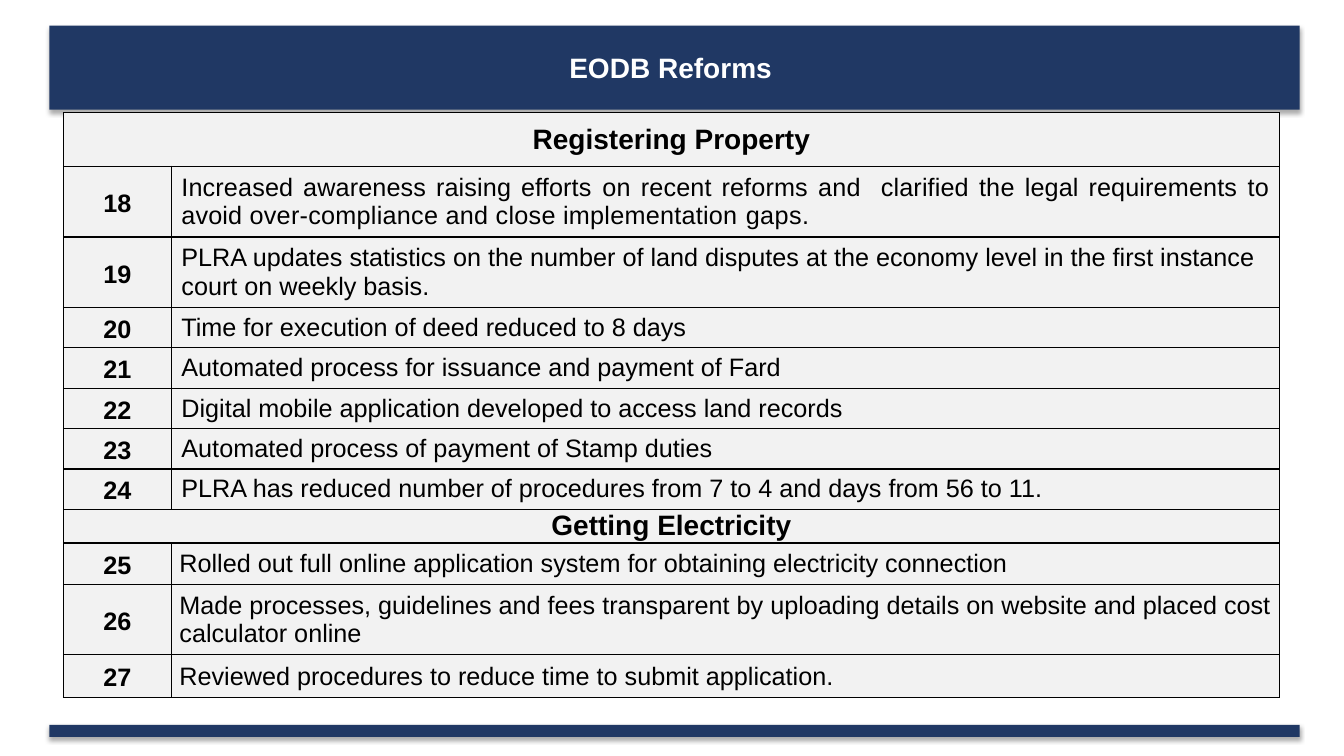
from dataclasses import dataclass
from typing import Any

from lxml.etree import SubElement
from pptx import Presentation
from pptx.dml.color import RGBColor
from pptx.enum.shapes import MSO_SHAPE
from pptx.enum.text import MSO_ANCHOR, MSO_AUTO_SIZE, PP_ALIGN
from pptx.oxml import parse_xml
from pptx.oxml.ns import nsdecls, qn
from pptx.util import Inches, Pt

NAVY, WHITE, BLACK, PALE = "203864", "FFFFFF", "000000", "F2F2F2"
BAR_LEFT, BAR_WIDTH = 0.49, 12.4
COLUMN_WIDTHS = (1.07, 10.99)
BODY_INSETS, TIGHT_INSETS = (0.1, 0.05), (0.08, 0.05)


@dataclass(frozen=True)
class Span:
    text: str
    spacing: float = 0


@dataclass(frozen=True)
class Heading:
    text: str
    height: float
    insets: tuple[float, float]


@dataclass(frozen=True)
class Reform:
    number: int
    spans: tuple[Span, ...]
    height: float = 0.4
    number_insets: tuple[float, float] = (0.07, 0)
    insets: tuple[float, float] = BODY_INSETS
    align: Any = PP_ALIGN.LEFT
    space_before: float = 0
    line_spacing: float = 1.0


AWARENESS = (
    Span("Increased awareness raising efforts ", 0.1),
    Span("on ", 0.2),
    Span("recent reforms ", 0.1),
    Span("and  ", 0.2),
    Span("clarified ", 0.1),
    Span("the ", 0.2),
    Span("legal requirements ", 0.1),
    Span("to ", 0.3),
    Span("avoid ", 0.1),
    Span("over-compliance and close implementation ", 0.2),
    Span("gaps.", 0.3),
)


def electricity(number: int, text: str, height: float, line_spacing: float = 1.0) -> Reform:
    return Reform(number, (Span(text),), height, (0.06, 0), TIGHT_INSETS,
                  line_spacing=line_spacing)


ROWS: tuple[Heading | Reform, ...] = (
    Heading("Registering Property", 0.53, (0.05, 0)),
    Reform(18, AWARENESS, 0.7, align=PP_ALIGN.JUSTIFY, space_before=2.1),
    Reform(19, (Span("PLRA updates statistics on the number of land disputes at the economy "
                     "level in the ﬁrst instance court on weekly basis."),), 0.7),
    Reform(20, (Span("Time for execution of deed reduced to 8 days"),)),
    Reform(21, (Span("Automated process for issuance and payment of Fard"),)),
    Reform(22, (Span("Digital mobile application developed to access land records"),)),
    Reform(23, (Span("Automated process of payment of Stamp duties"),)),
    Reform(24, (Span("PLRA has reduced number of procedures from 7 to 4 and days from 56 to 11."),)),
    Heading("Getting Electricity", 0.33, (0.07, 0)),
    electricity(25, "Rolled out full online application system for obtaining "
                    "electricity connection", 0.41),
    electricity(26, "Made processes, guidelines and fees transparent by uploading details "
                    "on website and placed cost calculator online", 0.7),
    electricity(27, "Reviewed procedures to reduce time to submit application.", 0.42, 1.07),
)


def color(value: str) -> RGBColor:
    return RGBColor.from_string(value)


def apply(target: Any, values: dict[str, Any]) -> None:
    for name, value in values.items():
        setattr(target, name, value)


def write(frame: Any, spans: tuple[Span, ...], size: float, bold: bool, ink: str,
          layout: dict[str, Any]) -> None:
    para = frame.paragraphs[0]
    apply(para, {"space_before": Pt(0), "line_spacing": 1.0, **layout})
    for part in spans:
        span = para.add_run()
        span.text = part.text
        apply(span.font, {"name": "Arial", "size": Pt(size), "bold": bold})
        span.font.color.rgb = color(ink)
        if part.spacing:
            span._r.get_or_add_rPr().set("spc", str(round(part.spacing * 100)))


def style_bar(box: Any, top: float, height: float) -> None:
    apply(box, {"left": Inches(BAR_LEFT), "top": Inches(top),
                "width": Inches(BAR_WIDTH), "height": Inches(height)})
    box.fill.solid()
    box.fill.fore_color.rgb = color(NAVY)
    box.line.fill.background()
    box.shadow.inherit = False
    effects = box._element.spPr.find(qn("a:effectLst"))
    shadow = SubElement(effects, qn("a:outerShdw"), blurRad=str(Pt(3.5)), dist=str(Pt(2.2)),
                        dir="5400000", algn="t", rotWithShape="0")
    ink = SubElement(shadow, qn("a:srgbClr"), val=BLACK)
    SubElement(ink, qn("a:alpha"), val="32000")


def style_cell(cell: Any, insets: tuple[float, float]) -> None:
    side, end = (Inches(inset) for inset in insets)
    apply(cell, {"margin_left": side, "margin_right": side, "margin_top": end,
                 "margin_bottom": end, "vertical_anchor": MSO_ANCHOR.MIDDLE})
    cell.fill.solid()
    cell.fill.fore_color.rgb = color(PALE)
    properties = cell._tc.get_or_add_tcPr()
    for index, edge in enumerate(("lnL", "lnR", "lnT", "lnB")):
        properties.insert(index, parse_xml(
            f'<a:{edge} {nsdecls("a")} w="{Pt(1)}"><a:solidFill>'
            f'<a:srgbClr val="{BLACK}"/></a:solidFill></a:{edge}>'))


def draw_heading(cells: list[Any], heading: Heading) -> None:
    cells[0].merge(cells[1])
    for cell in cells:
        style_cell(cell, heading.insets)
    write(cells[0].text_frame, (Span(heading.text),), 20, True, BLACK,
          {"alignment": PP_ALIGN.CENTER})


def draw_reform(cells: list[Any], reform: Reform) -> None:
    style_cell(cells[0], reform.number_insets)
    write(cells[0].text_frame, (Span(str(reform.number)),), 18, True, BLACK,
          {"alignment": PP_ALIGN.CENTER, "line_spacing": 1.15})
    style_cell(cells[1], reform.insets)
    write(cells[1].text_frame, reform.spans, 18, False, BLACK,
          {"alignment": reform.align, "space_before": Pt(reform.space_before),
           "line_spacing": reform.line_spacing})


def draw_table(page: Any) -> None:
    table = page.shapes.add_table(
        len(ROWS), len(COLUMN_WIDTHS), Inches(0.63), Inches(1.12),
        Inches(sum(COLUMN_WIDTHS)), Inches(sum(row.height for row in ROWS))).table
    apply(table, {"first_row": False, "horz_banding": False})
    for column, width in zip(table.columns, COLUMN_WIDTHS):
        column.width = Inches(width)
    for row, entry in zip(table.rows, ROWS):
        row.height = Inches(entry.height)
        cells = list(row.cells)
        if isinstance(entry, Heading):
            draw_heading(cells, entry)
        else:
            draw_reform(cells, entry)


def main() -> None:
    deck = Presentation()
    apply(deck, {"slide_width": Inches(13.33), "slide_height": Inches(7.5)})
    page = deck.slides.add_slide(deck.slide_layouts[5])
    title = page.shapes.title
    style_bar(title, 0.45, 0.44)
    apply(title.text_frame, {"word_wrap": True, "vertical_anchor": MSO_ANCHOR.MIDDLE,
                             "auto_size": MSO_AUTO_SIZE.SHAPE_TO_FIT_TEXT})
    write(title.text_frame, (Span("EODB Reforms "),), 20, True, WHITE,
          {"alignment": PP_ALIGN.CENTER})
    footer = page.shapes.add_shape(MSO_SHAPE.RECTANGLE, 0, 0, 0, 0)
    style_bar(footer, 7.19, 0.12)
    draw_table(page)
    deck.save("out.pptx")


if __name__ == "__main__":
    main()
